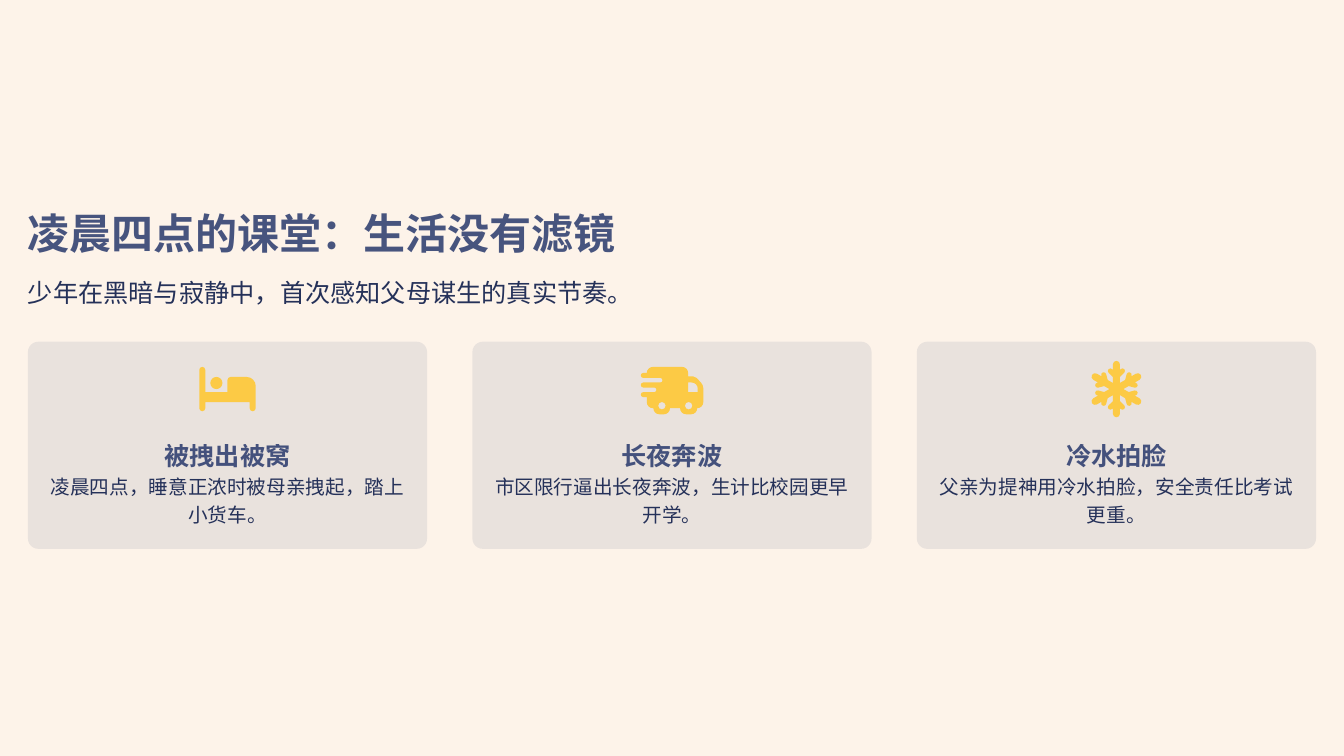
from dataclasses import dataclass
from math import cos, dist, radians, sin

from lxml import etree
from pptx import Presentation
from pptx.dml.color import RGBColor
from pptx.enum.shapes import MSO_SHAPE
from pptx.enum.text import MSO_ANCHOR, PP_ALIGN
from pptx.oxml.ns import qn
from pptx.util import Inches, Pt

RECTANGLE = MSO_SHAPE.RECTANGLE
ROUNDED = MSO_SHAPE.ROUNDED_RECTANGLE
MIDDLE = MSO_ANCHOR.MIDDLE
LEFT, CENTER = PP_ALIGN.LEFT, PP_ALIGN.CENTER

SLIDE_WIDTH, SLIDE_HEIGHT = Inches(13.33), Inches(7.5)
COLUMN, ROW = SLIDE_WIDTH / 100, SLIDE_HEIGHT / 100
ICON_UNIT = SLIDE_WIDTH / 1333

FONT = "Noto Sans CJK SC"
CREAM, NAVY, INK, YELLOW = "FDF3E9", "2A3A6D", "253159", "FCCA45"

MARGIN = 2.08
CARD_TOP, CARD_WIDTH, CARD_HEIGHT = 45.2, 29.7, 27.4
CARD_PADDING = 1.3
ICON_ROW = 51.47
ARC_HANDLE = 0.45

Point = tuple[float, float]
Corner = tuple[float, float, float]
Contour = list[Corner]
Segment = list[Point]


@dataclass(frozen=True)
class Box:
    left: float
    top: float
    width: float
    height: float

    def place(self) -> tuple[int, int, int, int]:
        return (round(self.left * COLUMN), round(self.top * ROW),
                round(self.width * COLUMN), round(self.height * ROW))


@dataclass(frozen=True)
class TextStyle:
    size: int
    color: str
    opacity: int = 100
    bold: bool = False
    spacing: float = 1.0
    alignment: int = LEFT


@dataclass(frozen=True)
class Card:
    heading: str
    body: str
    icon: list[Contour]


TITLE = TextStyle(30, NAVY, 85, True)
SUBTITLE = TextStyle(18, INK, spacing=1.3)
HEADING = TextStyle(18, NAVY, 85, True, 1.3, CENTER)
BODY = TextStyle(14, INK, spacing=1.2, alignment=CENTER)


def circle(x: float, y: float, radius: float) -> Contour:
    return [(x + sx * radius, y + sy * radius, radius)
            for sx, sy in ((-1, -1), (1, -1), (1, 1), (-1, 1))]


def rotate(corner: Corner, degrees: float) -> Corner:
    x, y, radius = corner
    c, s = cos(radians(degrees)), sin(radians(degrees))
    return x * c - y * s, x * s + y * c, radius


def snowflake() -> Contour:
    half = [(-3.5, -6, 0), (-3.5, -12, 0), (-9.5, -18, 2.4),
            (-6, -21.5, 2.4), (-3.5, -19, 0), (-3.5, -28, 3.5)]
    arm = half + [(-x, y, radius) for x, y, radius in reversed(half[1:])]
    return [rotate(corner, 60 * turn) for turn in range(6) for corner in arm]


BED = [
    [(-28, -22, 3), (-22, -22, 3), (-22, 3, 0), (0, 3, 0), (0, -12, 3),
     (28, -12, 9), (28, 22, 3), (22, 22, 3), (22, 13, 0), (-22, 13, 0),
     (-22, 22, 3), (-28, 22, 3)],
    circle(-11, -6, 6),
]
TRUCK = [
    [(-25, -22, 6), (16, -22, 6), (16, -12.5, 0), (23, -12.5, 2),
     (31, -4, 3), (31, 19, 6), (25, 19, 0), (25, 25, 6), (8, 25, 6),
     (8, 19, 0), (-2, 19, 0), (-2, 25, 6), (-18.5, 25, 6), (-18.5, 19, 0),
     (-25, 19, 6), (-25, 8, 0), (-31, 8, 2.5), (-31, 3, 2.5), (-15.5, 3, 2),
     (-15.5, -1.5, 2), (-31, -1.5, 2.5), (-31, -6.5, 2.5), (-9.5, -6.5, 2),
     (-9.5, -11, 2), (-31, -11, 2.5), (-31, -16, 2.5), (-25, -16, 0)],
    [(25.5, 3, 0), (25.5, -6.5, 6), (16, -6.5, 0), (16, 3, 0)],
    circle(-10, 16.5, 3.7),
    circle(16.5, 16.5, 3.7),
]
CARDS = [
    Card("被拽出被窝", "凌晨四点，睡意正浓时被母亲拽起，踏上小货车。", BED),
    Card("长夜奔波", "市区限行逼出长夜奔波，生计比校园更早开学。", TRUCK),
    Card("冷水拍脸", "父亲为提神用冷水拍脸，安全责任比考试更重。", [snowflake()]),
]


def paint(fill, color: str, opacity: int = 100) -> None:
    fill.solid()
    fill.fore_color.rgb = RGBColor.from_string(color)
    if opacity < 100:
        color_element = fill._xPr.find(qn("a:solidFill"))[0]
        etree.SubElement(color_element, qn("a:alpha"), val=str(opacity * 1000))


def finish(shape, color: str, opacity: int = 100) -> None:
    shape.shadow.inherit = False
    shape.line.fill.background()
    paint(shape.fill, color, opacity)


def toward(start: Point, end: Point, length: float) -> Point:
    share = length / dist(start, end)
    return (start[0] + (end[0] - start[0]) * share,
            start[1] + (end[1] - start[1]) * share)


def round_corners(contour: Contour) -> list[Segment]:
    segments: list[Segment] = []
    for index, (x, y, radius) in enumerate(contour):
        before = contour[index - 1][:2]
        after = contour[(index + 1) % len(contour)][:2]
        entry = toward((x, y), before, radius)
        if not segments or dist(segments[-1][-1], entry) > 0.1:
            segments.append([entry])
        if radius:
            segments.append([toward((x, y), before, radius * ARC_HANDLE),
                             toward((x, y), after, radius * ARC_HANDLE),
                             toward((x, y), after, radius)])
    return segments


def bend(shape, segments: list[Segment]) -> None:
    steps = list(shape._element.iter(qn("a:moveTo"), qn("a:lnTo")))
    for step, segment in zip(steps, segments):
        if len(segment) == 3:
            curve = etree.Element(qn("a:cubicBezTo"))
            for x, y in segment:
                etree.SubElement(curve, qn("a:pt"),
                                 x=str(x - shape.left), y=str(y - shape.top))
            step.getparent().replace(step, curve)


def draw_icon(slide, contours: list[Contour], center: float) -> None:
    outlines = [[[(round(center * COLUMN + x * ICON_UNIT),
                   round(ICON_ROW * ROW + y * ICON_UNIT)) for x, y in segment]
                 for segment in round_corners(contour)] for contour in contours]
    builder = slide.shapes.build_freeform(*outlines[0][0][0])
    for index, outline in enumerate(outlines):
        if index:
            builder.move_to(*outline[0][0])
        builder.add_line_segments([segment[-1] for segment in outline[1:]], close=True)
    shape = builder.convert_to_shape()
    bend(shape, [segment for outline in outlines for segment in outline])
    finish(shape, YELLOW)


def draw_text(slide, text: str, box: Box, style: TextStyle) -> None:
    frame = slide.shapes.add_textbox(*box.place()).text_frame
    frame.word_wrap = True
    frame.vertical_anchor = MIDDLE
    frame.margin_left = frame.margin_right = frame.margin_top = frame.margin_bottom = 0
    frame.text = text
    paragraph = frame.paragraphs[0]
    paragraph.alignment = style.alignment
    paragraph.line_spacing = style.spacing
    font = paragraph.runs[0].font
    font.size, font.bold, font.name = Pt(style.size), style.bold, FONT
    paint(font.fill, style.color, style.opacity)
    etree.SubElement(font._element, qn("a:ea"), typeface=FONT)


def draw_card(slide, card: Card, left: float) -> None:
    center = left + CARD_WIDTH / 2
    box = Box(left, CARD_TOP, CARD_WIDTH, CARD_HEIGHT)
    panel = slide.shapes.add_shape(ROUNDED, *box.place())
    panel.adjustments[0] = 0.05
    finish(panel, NAVY, 9)
    draw_icon(slide, card.icon, center)
    heading_width = 1.9 * len(card.heading) + 0.9
    draw_text(slide, card.heading,
              Box(center - heading_width / 2, 57.1, heading_width, 5.2), HEADING)
    draw_text(slide, card.body,
              Box(left + CARD_PADDING, 62.15, CARD_WIDTH - 2 * CARD_PADDING, 7.5), BODY)


def main() -> None:
    presentation = Presentation()
    presentation.slide_width, presentation.slide_height = SLIDE_WIDTH, SLIDE_HEIGHT
    slide = presentation.slides.add_slide(presentation.slide_layouts[6])
    backdrop = slide.shapes.add_shape(RECTANGLE, *Box(0, -1.7, 100, 102.9).place())
    finish(backdrop, CREAM)
    draw_text(slide, "凌晨四点的课堂：生活没有滤镜", Box(MARGIN, 27.5, 97.4, 6.7), TITLE)
    draw_text(slide, "少年在黑暗与寂静中，首次感知父母谋生的真实节奏。",
              Box(MARGIN, 35.5, 96.8, 5.2), SUBTITLE)
    pitch = (100 - 2 * MARGIN - CARD_WIDTH) / (len(CARDS) - 1)
    for index, card in enumerate(CARDS):
        draw_card(slide, card, MARGIN + index * pitch)
    presentation.save("out.pptx")


if __name__ == "__main__":
    main()
